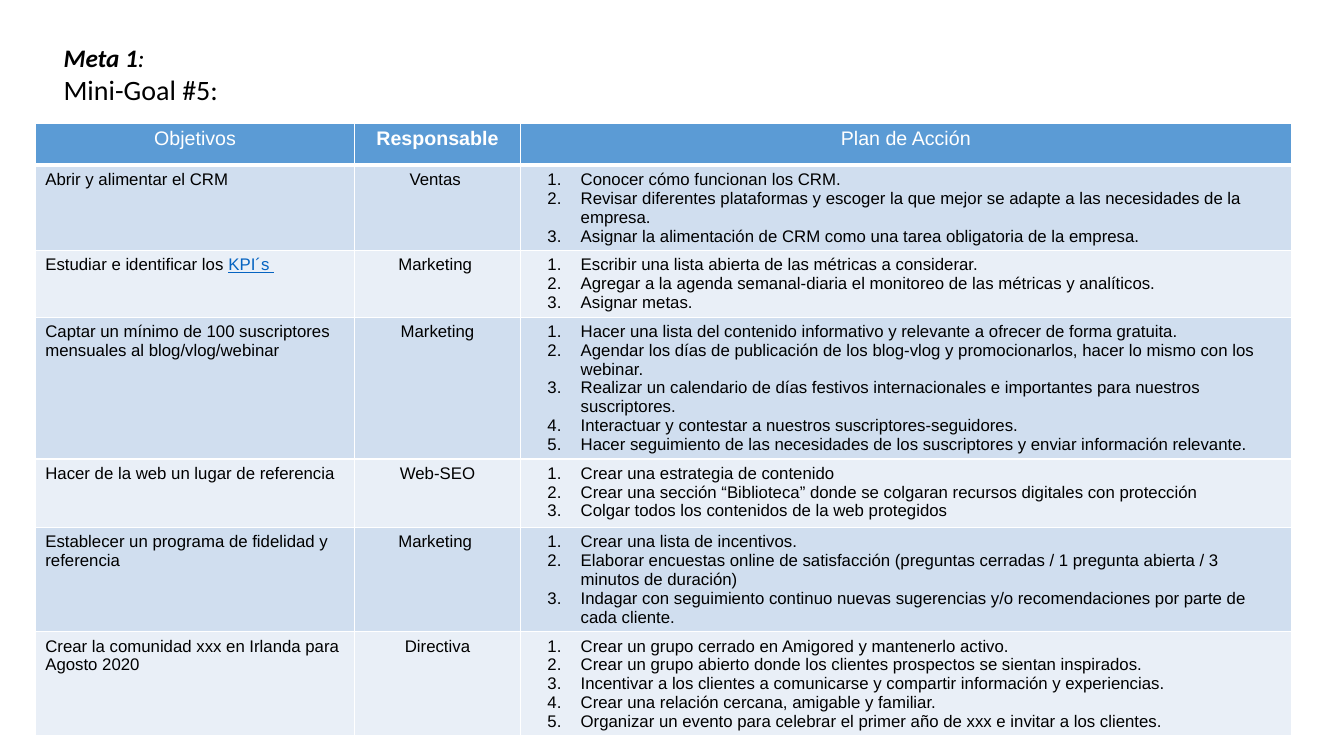
import pptx
import pptx.dml.color
import pptx.enum.text
import pptx.oxml
import pptx.oxml.ns
import pptx.util

Inches = pptx.util.Inches
Pt = pptx.util.Pt
ALIGN = pptx.enum.text.PP_ALIGN

BLACK, WHITE, LINK = "000000", "FFFFFF", "0563C1"
HEADER_FILL, BAND_FILLS = "5B9BD5", ("D0DEEF", "E9EFF7")

COLUMN_WIDTHS = (3.17, 1.64, 7.65)
ROW_HEIGHTS = (0.42, 0.7, 0.66, 0.55, 0.68, 0.47, 0.51)
# Heading and whether it is bold
HEADINGS = (("Objetivos", False), ("Responsable", True), ("Plan de Acción", False))

# Objective (text, linked text), person in charge, action steps
GOALS = [
    (("Abrir y alimentar el CRM", ""), "Ventas ", [
        "Conocer cómo funcionan los CRM.",
        "Revisar diferentes plataformas y escoger la que mejor se adapte a las necesidades de la empresa.",
        "Asignar la alimentación de CRM como una tarea obligatoria de la empresa."]),
    (("Estudiar e identificar los ", "KPI´s "), "Marketing ", [
        "Escribir una lista abierta de las métricas a considerar.",
        "Agregar a la agenda semanal-diaria el monitoreo de las métricas y analíticos.",
        "Asignar metas."]),
    (("Captar un mínimo de 100 suscriptores mensuales al blog/vlog/webinar", ""), "Marketing", [
        "Hacer una lista del contenido informativo y relevante a ofrecer de forma gratuita.",
        "Agendar los días de publicación de los blog-vlog y promocionarlos, hacer lo mismo con los webinar.",
        "Realizar un calendario de días festivos internacionales e importantes para nuestros suscriptores.",
        "Interactuar y contestar a nuestros suscriptores-seguidores.",
        "Hacer seguimiento de las necesidades de los suscriptores y enviar información relevante."]),
    (("Hacer de la web un lugar de referencia", ""), "Web-SEO", [
        "Crear una estrategia de contenido",
        "Crear una sección “Biblioteca” donde se colgaran recursos digitales con protección",
        "Colgar todos los contenidos de la web protegidos"]),
    (("Establecer un programa de fidelidad y referencia", ""), "Marketing ", [
        "Crear una lista de incentivos.",
        "Elaborar encuestas online de satisfacción (preguntas cerradas / 1 pregunta abierta / 3 minutos de duración)",
        "Indagar con seguimiento continuo nuevas sugerencias y/o recomendaciones por parte de cada cliente."]),
    (("Crear la comunidad xxx en Irlanda para Agosto 2020", ""), "Directiva", [
        "Crear un grupo cerrado en Amigored y mantenerlo activo.",
        "Crear un grupo abierto donde los clientes prospectos se sientan inspirados.",
        "Incentivar a los clientes a comunicarse y compartir información y experiencias.",
        "Crear una relación cercana, amigable y familiar.",
        "Organizar un evento para celebrar el primer año de xxx e invitar a los clientes."]),
]


def paint(target, color):
    """Colour a font or a fill."""
    if hasattr(target, "solid"):
        target.solid()
        target.fore_color.rgb = pptx.dml.color.RGBColor.from_string(color)
    else:
        target.color.rgb = pptx.dml.color.RGBColor.from_string(color)


def add_run(paragraph, text, size, color=BLACK, font="Arial", bold=False, italic=False):
    run = paragraph.add_run()
    run.text = text
    run.font.size, run.font.name = Pt(size), font
    run.font.bold, run.font.italic = bold, italic
    paint(run.font, color)
    return run


def add_paragraph(frame, first, align=ALIGN.LEFT):
    paragraph = frame.paragraphs[0] if first else frame.add_paragraph()
    paragraph.alignment = align
    return paragraph


def number(paragraph):
    """Turn a paragraph into a numbered step with a hanging indent."""
    properties = paragraph._p.get_or_add_pPr()
    properties.set("marL", str(Inches(0.5)))
    properties.set("indent", str(Inches(-0.33)))
    ns = pptx.oxml.ns.nsdecls("a")
    for xml in (f'<a:buClr {ns}><a:srgbClr val="{BLACK}"/></a:buClr>',
                f'<a:buFont {ns} typeface="+mj-lt"/>',
                f'<a:buAutoNum {ns} type="arabicPeriod"/>'):
        properties.append(pptx.oxml.parse_xml(xml))


def style_cell(cell, fill, top=1, bottom=1):
    """White borders, widths in points, around a plain fill."""
    properties = cell._tc.get_or_add_tcPr()
    for side, width in (("L", 1), ("R", 1), ("T", top), ("B", bottom)):
        properties.append(pptx.oxml.parse_xml(
            f'<a:ln{side} {pptx.oxml.ns.nsdecls("a")} w="{Pt(width)}">'
            f'<a:solidFill><a:srgbClr val="{WHITE}"/></a:solidFill></a:ln{side}>'))
    paint(cell.fill, fill)


def fill_title(title, left, top, width, height):
    title.left, title.top = Inches(left), Inches(top)
    title.width, title.height = Inches(width), Inches(height)
    frame = title.text_frame
    frame.word_wrap = True
    frame.auto_size = pptx.enum.text.MSO_AUTO_SIZE.NONE
    frame.vertical_anchor = pptx.enum.text.MSO_ANCHOR.MIDDLE
    goal = add_paragraph(frame, True)
    add_run(goal, "Meta 1", 18, font="Calibri", bold=True, italic=True)
    add_run(goal, ":", 18, font="Calibri", italic=True)
    add_run(add_paragraph(frame, False), "Mini-Goal #5:", 20, font="Calibri")


def add_plan(slide, left, top):
    plan = slide.shapes.add_table(
        len(ROW_HEIGHTS), len(COLUMN_WIDTHS), Inches(left), Inches(top),
        Inches(sum(COLUMN_WIDTHS)), Inches(sum(ROW_HEIGHTS))).table
    for column, width in zip(plan.columns, COLUMN_WIDTHS):
        column.width = Inches(width)
    for row, height in zip(plan.rows, ROW_HEIGHTS):
        row.height = Inches(height)

    # Header row
    for column, (heading, bold) in enumerate(HEADINGS):
        cell = plan.cell(0, column)
        style_cell(cell, HEADER_FILL, bottom=3)
        add_run(add_paragraph(cell.text_frame, True, ALIGN.CENTER), heading, 14, WHITE, bold=bold)

    # One banded row per objective
    for row, ((objective, linked), person, steps) in enumerate(GOALS, start=1):
        cells = [plan.cell(row, column) for column in range(len(COLUMN_WIDTHS))]
        for cell in cells:
            style_cell(cell, BAND_FILLS[(row - 1) % 2], top=3 if row == 1 else 1)
        objective_line = add_paragraph(cells[0].text_frame, True)
        add_run(objective_line, objective, 12)
        if linked:
            add_run(objective_line, linked, 12, LINK).font.underline = True
        add_run(add_paragraph(cells[1].text_frame, True, ALIGN.CENTER), person, 12)
        for index, step in enumerate(steps):
            step_line = add_paragraph(cells[2].text_frame, index == 0)
            number(step_line)
            add_run(step_line, step, 12)


def main():
    deck = pptx.Presentation()
    deck.slide_width, deck.slide_height = Inches(13.33), Inches(7.5)
    slide = deck.slides.add_slide(deck.slide_layouts[5])
    fill_title(slide.shapes.title, 0.53, 0.37, 11.21, 0.74)
    add_plan(slide, 0.35, 1.22)
    deck.save("out.pptx")


if __name__ == "__main__":
    main()
